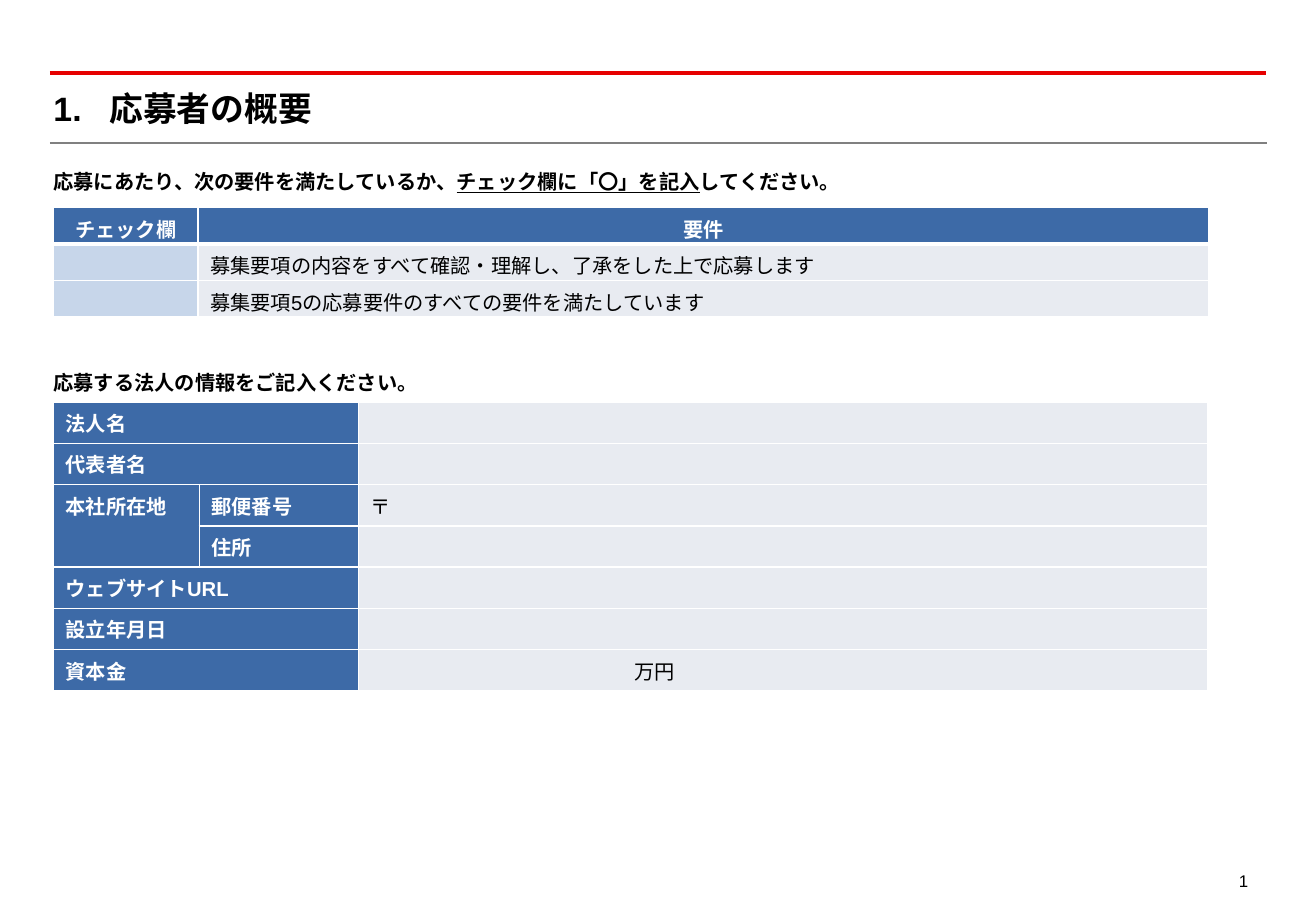
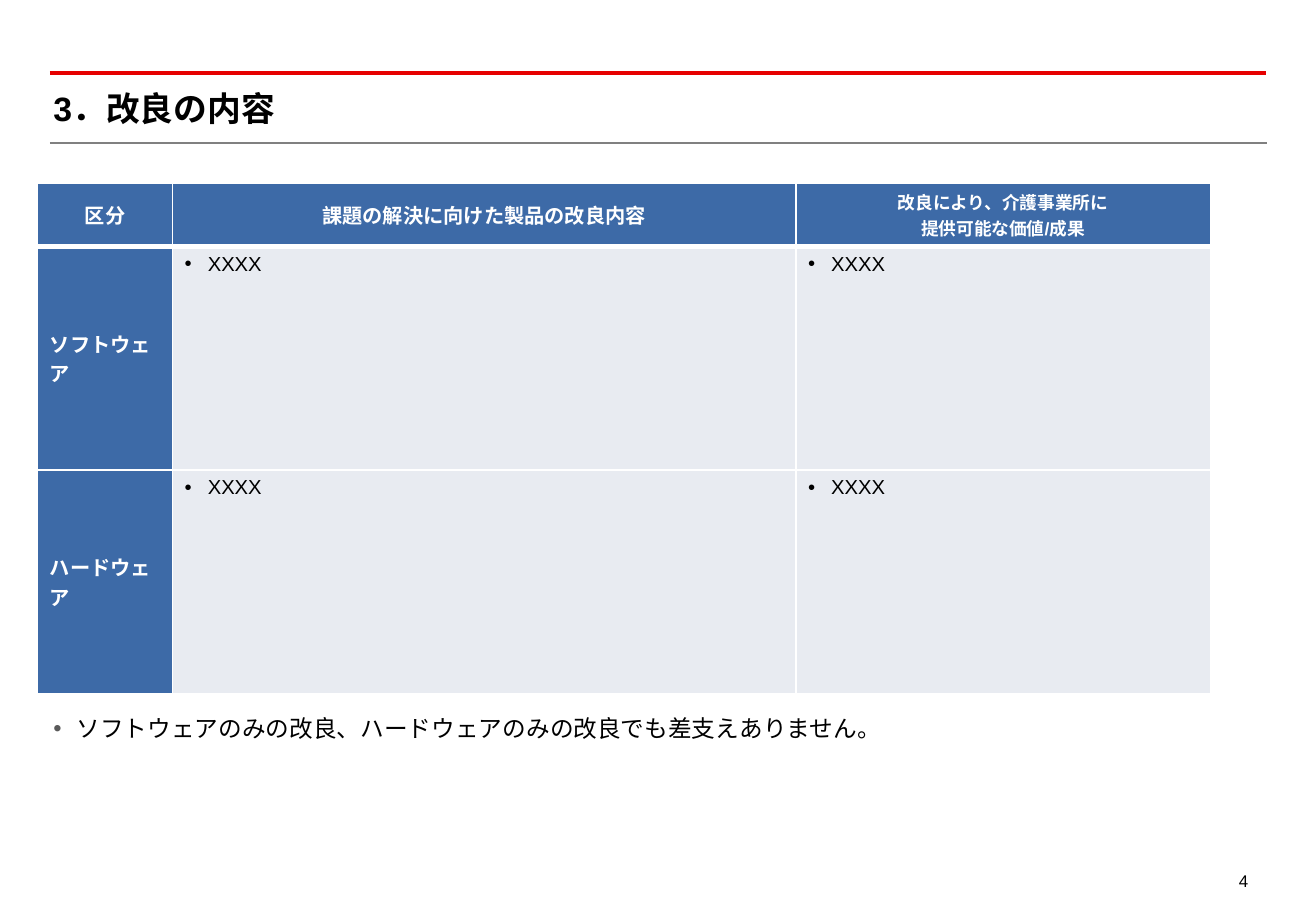
from dataclasses import dataclass

from lxml import etree
from pptx import Presentation
from pptx import util as u
from pptx.dml.color import RGBColor
from pptx.enum import shapes, text
from pptx.oxml.ns import qn

FONT = "Arial"
BLACK, WHITE, RED, GRAY = "000000", "FFFFFF", "E60000", "808080"
BLUE, PALE, MIST, DOT = "3D6AA7", "C7D6EA", "E8EBF1", "5A5A5A"
LEFT, WIDE = 0.44, 9.91
MID = text.MSO_ANCHOR.MIDDLE
CENTER, RIGHT = text.PP_ALIGN.CENTER, text.PP_ALIGN.RIGHT


@dataclass(frozen=True)
class Rule:
    top: float
    end: float
    hue: str
    thick: float


@dataclass(frozen=True)
class Cell:
    """One table cell; span is (rows, columns)."""
    words: str = ""
    fill: str = MIST
    hue: str = BLACK
    bold: bool = False
    size: float = 12
    center: bool = False
    middle: bool = False
    indent: float = 0
    dot: str = ""
    span: tuple[int, int] = (1, 1)


@dataclass(frozen=True)
class Grid:
    left: float
    top: float
    cols: list[float]
    rows: list[float]
    cells: list[list[Cell | None]]
    head: bool = False
    foot: float = 0.05


RULES = [Rule(0.6, 10.42, RED, 2), Rule(1.18, 10.43, GRAY, 1.25)]


def rgb(code: str) -> RGBColor:
    return RGBColor.from_string(code)


def write(frame, words: str, *, size: float = 12, bold: bool = False,
          hue: str = BLACK, align=None, under: str = "", indent: float = 0,
          dot: str = "", tab: float = 0) -> None:
    """Fill a text frame, one paragraph a line; dot is a bullet colour."""
    for n, line in enumerate(words.split("\n")):
        para = frame.add_paragraph() if n else frame.paragraphs[0]
        if align is not None:
            para.alignment = align
        props = para._p.get_or_add_pPr()
        if indent:
            props.set("marL", str(u.Inches(indent)))
        if dot:
            props.set("indent", str(-u.Inches(indent)))
            tint = etree.SubElement(props, qn("a:buClr"))
            etree.SubElement(tint, qn("a:srgbClr"), val=dot)
            etree.SubElement(props, qn("a:buFont"), typeface=FONT)
            etree.SubElement(props, qn("a:buChar"), char="•")
        if tab:
            stops = etree.SubElement(props, qn("a:tabLst"))
            etree.SubElement(stops, qn("a:tab"), pos=str(u.Inches(tab)), algn="l")
        if not line:
            etree.SubElement(para._p, qn("a:endParaRPr"), sz=str(int(size * 100)))
            continue
        for part in line.partition(under) if under else (line,):
            run = para.add_run()
            run.text = part
            font = run.font
            font.name, font.size, font.bold = FONT, u.Pt(size), bold
            font.color.rgb = rgb(hue)
            if under and part == under:
                font.underline = True


def strip(frame) -> None:
    """Wrap the text and take away all insets."""
    frame.word_wrap = True
    frame.auto_size = text.MSO_AUTO_SIZE.NONE
    frame.margin_left = frame.margin_right = 0
    frame.margin_top = frame.margin_bottom = 0


def label(slide, top: float, words: str, high: float = 0.22, **style) -> None:
    box = slide.shapes.add_textbox(u.Inches(LEFT), u.Inches(top),
                                   u.Inches(WIDE), u.Inches(high))
    strip(box.text_frame)
    write(box.text_frame, words, **style)


def edge(cell, side: str, thick: float) -> None:
    line = etree.SubElement(cell._tc.get_or_add_tcPr(), qn(f"a:ln{side}"),
                            w=str(u.Pt(thick)))
    fill = etree.SubElement(line, qn("a:solidFill"))
    etree.SubElement(fill, qn("a:srgbClr"), val=WHITE)


def draw(slide, grid: Grid) -> None:
    frame = slide.shapes.add_table(
        len(grid.rows), len(grid.cols), u.Inches(grid.left), u.Inches(grid.top),
        u.Inches(sum(grid.cols)), u.Inches(sum(grid.rows)))
    table = frame.table
    table.first_row, table.horz_banding = grid.head, False
    for col, wide in zip(table.columns, grid.cols):
        col.width = u.Inches(wide)
    for row, high in zip(table.rows, grid.rows):
        row.height = u.Inches(high)
    for r, line in enumerate(grid.cells):
        for c, item in enumerate(line):
            if item is None:
                continue
            cell = table.cell(r, c)
            down, over = item.span
            if item.span != (1, 1):
                cell.merge(table.cell(r + down - 1, c + over - 1))
            for side in "LRTB":
                thick = grid.head and (r, side) in ((0, "B"), (1, "T"))
                edge(cell, side, 3 if thick else 1)
            cell.fill.solid()
            cell.fill.fore_color.rgb = rgb(item.fill)
            cell.margin_top, cell.margin_bottom = u.Inches(0.05), u.Inches(grid.foot)
            if item.middle:
                cell.vertical_anchor = MID
            write(cell.text_frame, item.words, size=item.size, bold=item.bold,
                  hue=item.hue, align=CENTER if item.center else None,
                  indent=item.indent, dot=item.dot)


def start(deck, title: str, page: str):
    """Add a slide with the shared title, rules and page number."""
    slide = deck.slides.add_slide(deck.slide_layouts[5])
    head = slide.shapes.title
    head.left, head.top = u.Inches(LEFT), u.Inches(0.72)
    head.width, head.height = u.Inches(WIDE), u.Inches(0.34)
    strip(head.text_frame)
    head.text_frame.vertical_anchor = MID
    write(head.text_frame, title, size=20, bold=True,
          align=text.PP_ALIGN.LEFT, tab=0.46)
    for rule in RULES:
        line = slide.shapes.add_connector(
            shapes.MSO_CONNECTOR.STRAIGHT, u.Inches(0.41), u.Inches(rule.top),
            u.Inches(rule.end), u.Inches(rule.top))
        line.line.color.rgb = rgb(rule.hue)
        line.line.width = u.Pt(rule.thick)
        etree.SubElement(line._element.spPr, qn("a:effectLst"))
    box = slide.shapes.add_textbox(u.Inches(9.93), u.Inches(7.12),
                                   u.Inches(0.44), u.Inches(0.28))
    write(box.text_frame, page, size=10, align=RIGHT)
    return slide


def head(words: str, size: float = 12) -> Cell:
    return Cell(words, BLUE, WHITE, True, size, center=True, middle=True)


def name(words: str, span: tuple[int, int] = (1, 1), middle: bool = False) -> Cell:
    return Cell(words, BLUE, WHITE, True, span=span, middle=middle)


def wide(words: str, body: Cell = Cell()) -> list[Cell | None]:
    """A row whose name covers two columns."""
    return [name(words, (1, 2)), None, body]


def profile(deck) -> None:
    slide = start(deck, "1.\t応募者の概要", "1")
    label(slide, 1.39, "応募にあたり、次の要件を満たしているか、チェック欄に「〇」を記入してください。",
          bold=True, under="チェック欄に「〇」を記入")
    check = Cell(fill=PALE)
    draw(slide, Grid(LEFT, 1.71, [1.19, 8.32], [0.3] * 3, [
        [head("チェック欄"), head("要件")],
        [check, Cell("募集要項の内容をすべて確認・理解し、了承をした上で応募します")],
        [check, Cell("募集要項5の応募要件のすべての要件を満たしています")],
    ], head=True, foot=0))
    label(slide, 3.05, "応募する法人の情報をご記入ください。", bold=True)
    draw(slide, Grid(LEFT, 3.31, [1.2, 1.31, 6.99], [0.34] * 7, [
        wide("法人名"),
        wide("代表者名"),
        [name("本社所在地", (2, 1)), name("郵便番号"), Cell("〒")],
        [None, name("住所"), Cell()],
        wide("ウェブサイトURL"),
        wide("設立年月日"),
        wide("資本金", Cell("万円", indent=2.17)),
    ]))


def plan(deck) -> None:
    slide = start(deck, "3．改良の内容", "4")
    item = Cell("XXXX", indent=0.19, dot=BLACK)
    draw(slide, Grid(0.31, 1.51, [1.11, 5.13, 3.41], [0.52, 1.84, 1.84], [
        [head("区分"), head("課題の解決に向けた製品の改良内容"),
         head("改良により、介護事業所に\n提供可能な価値/成果", 10.5)],
        *[[name(kind, middle=True), item, item]
          for kind in ("ソフトウェア", "ハードウェア")],
    ], head=True))
    label(slide, 5.88, "ソフトウェアのみの改良、ハードウェアのみの改良でも差支えありません。",
          high=0.25, size=14, indent=0.19, dot=DOT)


def main() -> None:
    deck = Presentation()
    deck.slide_width, deck.slide_height = u.Inches(10.83), u.Inches(7.5)
    profile(deck)
    plan(deck)
    deck.save("out.pptx")


if __name__ == "__main__":
    main()
